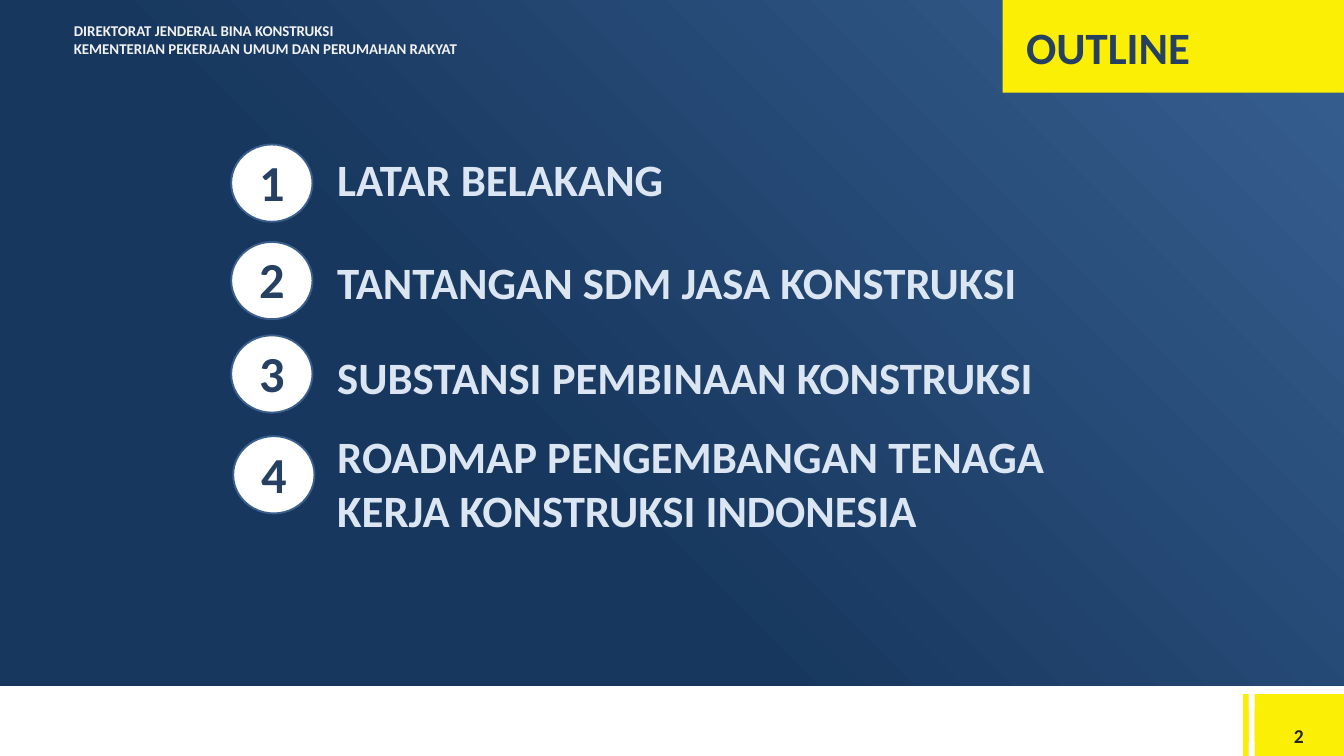
"""Build the OUTLINE agenda slide with four numbered topics."""
from pptx import Presentation
from pptx.dml.color import RGBColor
from pptx.enum.shapes import MSO_SHAPE as SHAPE
from pptx.enum.text import MSO_ANCHOR as ANCHOR, MSO_AUTO_SIZE as AUTOSIZE, PP_ALIGN as ALIGN
from pptx.util import Inches, Pt

COLORS = {
    "deep": "17375E", "blue": "376092", "white": "FFFFFF", "yellow": "FBEF05",
    "navy": "254061", "pale": "DCE6F2", "ring": "3A5F8C", "header": "F2F2F2", "ink": "262626",
}
RGB = {name: RGBColor.from_string(value) for name, value in COLORS.items()}


def draw(shapes, kind, box, color):
    shape = shapes.add_shape(kind, *map(Inches, box))
    shape.shadow.inherit = False
    shape.fill.solid()
    shape.fill.fore_color.rgb = RGB[color]
    shape.line.fill.background()
    return shape


def write(holder, lines, size, color, align=ALIGN.LEFT, anchor=ANCHOR.TOP,
          auto_size=AUTOSIZE.SHAPE_TO_FIT_TEXT, inset=(0.1, 0.05)):
    frame = holder.text_frame
    frame.text = lines
    across, down = map(Inches, inset)
    frame_format = {
        "word_wrap": True, "auto_size": auto_size, "vertical_anchor": anchor,
        "margin_left": across, "margin_right": across, "margin_top": down, "margin_bottom": down,
    }
    for name, value in frame_format.items():
        setattr(frame, name, value)
    for paragraph in frame.paragraphs:
        paragraph.alignment = align
        paragraph.font.color.rgb = RGB[color]
        for name, value in {"name": "Calibri", "size": Pt(size), "bold": True}.items():
            setattr(paragraph.font, name, value)


prs = Presentation()
prs.slide_width, prs.slide_height = Inches(20), Inches(11.25)
slide = prs.slides.add_slide(prs.slide_layouts[5])
shapes = slide.shapes

backdrop = draw(shapes, SHAPE.RECTANGLE, (0, 0, 20, 11.25), "deep")
backdrop.fill.gradient()
backdrop.fill.gradient_angle = 45
for stop, (position, color) in zip(backdrop.fill.gradient_stops, [(0.4, "deep"), (1, "blue")]):
    stop.position = position
    stop.color.rgb = RGB[color]
draw(shapes, SHAPE.RECTANGLE, (0, 10.21, 20, 1.04), "white")

ministry = shapes.add_textbox(*map(Inches, (1, 0.21, 6.25, 0.75)))
write(ministry, "DIREKTORAT JENDERAL BINA KONSTRUKSI\nKEMENTERIAN PEKERJAAN UMUM DAN PERUMAHAN RAKYAT",
      16, "header", anchor=ANCHOR.MIDDLE, auto_size=AUTOSIZE.NONE)

title_tab = draw(shapes, SHAPE.RECTANGLE, (14.92, 0, 5.08, 1.38), "yellow")
title = shapes.title
title.left, title.top, title.width, title.height = map(Inches, (15.17, 0.25, 6.42, 0.91))
write(title, "OUTLINE", 48, "navy")
title_tab.element.addnext(title.element)

topics = [
    ("LATAR BELAKANG", 3.44, 2.15, 2.21, 6.42, 0.91),
    ("TANTANGAN SDM JASA KONSTRUKSI", 3.44, 3.6, 3.74, 13.5, 0.91),
    ("SUBSTANSI PEMBINAAN KONSTRUKSI", 3.44, 4.99, 5.16, 12.17, 0.91),
    ("ROADMAP PENGEMBANGAN TENAGA KERJA KONSTRUKSI INDONESIA", 3.47, 6.49, 6.33, 11.42, 1.72),
]
for number, (topic, left, circle_top, topic_top, width, height) in enumerate(topics, 1):
    circle = draw(shapes, SHAPE.OVAL, (left, circle_top, 1.21, 1.15), "white")
    circle.line.color.rgb = RGB["ring"]
    circle.line.width = Pt(2)
    numeral = shapes.add_textbox(*map(Inches, (left - 0.02, circle_top + 0.05, 1.25, 1.01)))
    write(numeral, str(number), 54, "navy", align=ALIGN.CENTER)
    label = shapes.add_textbox(*map(Inches, (4.92, topic_top, width, height)))
    write(label, topic, 48, "pale")

for top in (10.33, 10.54):
    page_mark = shapes.add_group_shape()
    for left, width in [(18.67, 1.33), (18.5, 0.08)]:
        draw(page_mark.shapes, SHAPE.RECTANGLE, (left, top, width, 0.71), "yellow")
page_number = page_mark.shapes.add_textbox(*map(Inches, (18.79, 10.64, 0.79, 0.61)))
write(page_number, "2", 21, "ink", align=ALIGN.RIGHT, anchor=ANCHOR.MIDDLE,
      auto_size=AUTOSIZE.NONE, inset=(0.18, 0.09))

prs.save("out.pptx")
